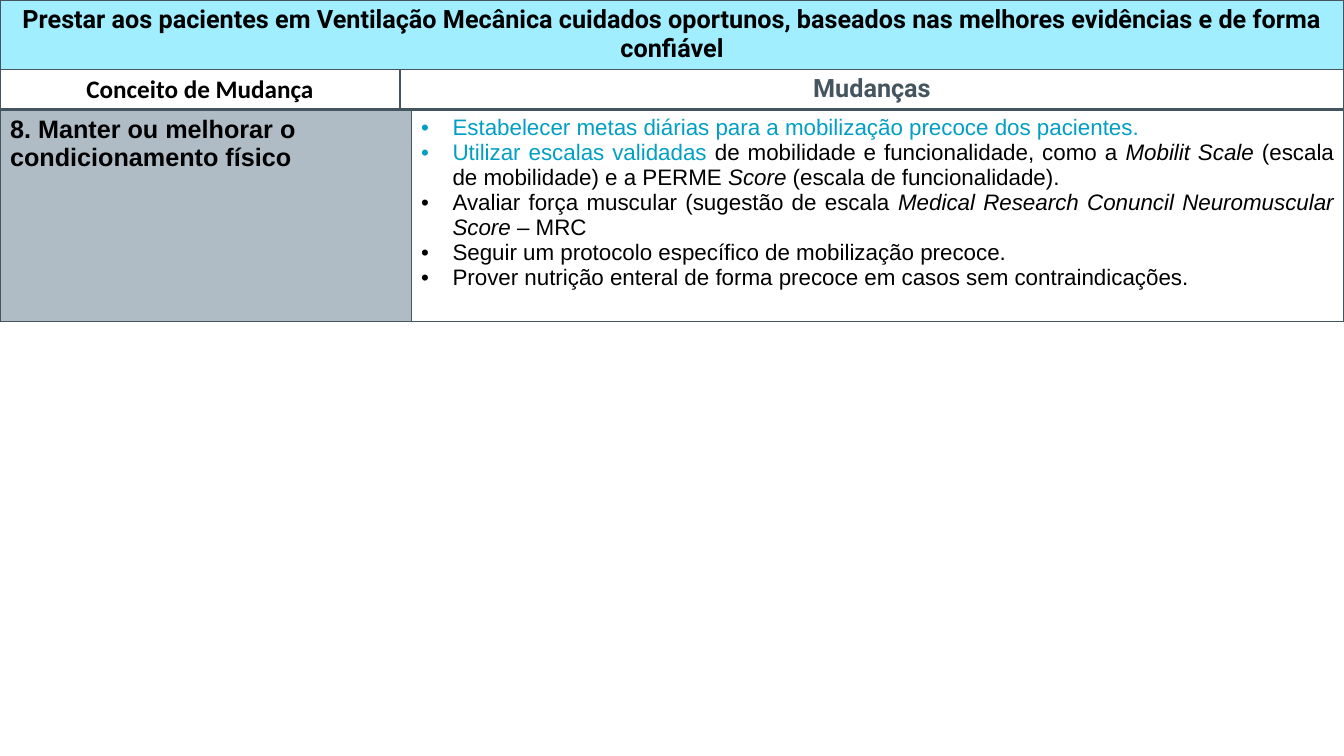
from lxml import etree
from pptx import Presentation
from pptx.dml.color import RGBColor
from pptx.enum.text import MSO_ANCHOR, PP_ALIGN
from pptx.oxml.ns import qn
from pptx.util import Cm, Pt

CENTER, LEFT, JUSTIFY = PP_ALIGN.CENTER, PP_ALIGN.LEFT, PP_ALIGN.JUSTIFY
MIDDLE = MSO_ANCHOR.MIDDLE
PAGE_WIDTH, PAGE_HEIGHT = 33.87, 19.05
SLATE, BLACK, BLUE, WHITE = "455560", "000000", "009FC3", "FFFFFF"
CYAN, GREY = "A0EEFF", "AFBCC5"

CHANGES = [
    (LEFT, [("Estabelecer metas diárias para a mobilização precoce dos pacientes.", BLUE, False)]),
    (JUSTIFY, [
        ("Utilizar escalas validadas ", BLUE, False),
        ("de mobilidade e funcionalidade, como a ", BLACK, False),
        ("Mobilit Scale ", BLACK, True),
        ("(escala de mobilidade) e a PERME ", BLACK, False),
        ("Score", BLACK, True),
        (" (escala de funcionalidade).", BLACK, False),
    ]),
    (JUSTIFY, [
        ("Avaliar força muscular (sugestão de escala ", BLACK, False),
        ("Medical Research Conuncil Neuromuscular Score ", BLACK, True),
        ("– MRC", BLACK, False),
    ]),
    (LEFT, [("Seguir um protocolo específico de mobilização precoce.", BLACK, False)]),
    (LEFT, [("Prover nutrição enteral de forma precoce em casos sem contraindicações.", BLACK, False)]),
]


def color(value):
    return RGBColor.from_string(value)


def add_border(cell):
    properties = cell._tc.get_or_add_tcPr()
    for side in ("a:lnL", "a:lnR", "a:lnT", "a:lnB"):
        line = etree.SubElement(properties, qn(side), w=str(Pt(1)))
        fill = etree.SubElement(line, qn("a:solidFill"))
        etree.SubElement(fill, qn("a:srgbClr"), val=SLATE)


def add_grid(page, top, widths, heights):
    frame = page.shapes.add_table(len(heights), len(widths), Cm(0), Cm(top),
                                  Cm(sum(widths)), Cm(sum(heights)))
    table = frame.table
    table.first_row = False
    table.horz_banding = False
    for column, width in zip(table.columns, widths):
        column.width = Cm(width)
    for row, height in zip(table.rows, heights):
        row.height = Cm(height)
    for cell in table.iter_cells():
        add_border(cell)
        cell.fill.background()
    return table


def fill_cell(cell, background):
    cell.fill.solid()
    cell.fill.fore_color.rgb = color(background)


def format_font(font, name, size, value, bold=False, italic=False):
    font.name = name
    font.size = Pt(size)
    font.color.rgb = color(value)
    font.bold = bold
    font.italic = italic


def write_heading(cell, text, name, value, background, align=CENTER):
    fill_cell(cell, background)
    cell.text_frame.text = text
    para = cell.text_frame.paragraphs[0]
    para.alignment = align
    format_font(para.runs[0].font, name, 18, value, bold=True)


def add_bullet(para):
    properties = para._p.get_or_add_pPr()
    properties.set("marL", str(Cm(0.79)))
    properties.set("indent", str(-Cm(0.79)))
    etree.SubElement(properties, qn("a:buFont"), typeface="Arial")
    etree.SubElement(properties, qn("a:buChar"), char="•")


def write_bullets(cell, items):
    frame = cell.text_frame
    for index, (align, spans) in enumerate(items):
        para = frame.add_paragraph() if index else frame.paragraphs[0]
        add_bullet(para)
        para.alignment = align
        for text, value, italic in spans:
            span = para.add_run()
            span.text = text
            format_font(span.font, "Arial", 16, value, italic=italic)


def add_header(page):
    table = add_grid(page, 0, (10.08, PAGE_WIDTH - 10.08), (1.74, 1.0))
    banner = table.cell(0, 0)
    banner.merge(table.cell(0, 1))
    write_heading(banner, "Prestar aos pacientes em Ventilação Mecânica cuidados oportunos, "
                  "baseados nas melhores evidências e de forma confiável", "Roboto", BLACK, CYAN)
    concept, changes = table.cell(1, 0), table.cell(1, 1)
    write_heading(concept, "Conceito de Mudança", "Calibri", BLACK, WHITE)
    write_heading(changes, "Mudanças", "Roboto", SLATE, WHITE)
    concept.vertical_anchor = changes.vertical_anchor = MIDDLE
    concept.margin_left = concept.margin_right = concept.margin_top = Cm(0.02)
    concept.margin_bottom = Cm(0)


def add_concept(page):
    table = add_grid(page, 2.79, (10.36, PAGE_WIDTH - 10.36), (5.31,))
    write_heading(table.cell(0, 0), "8. Manter ou melhorar o condicionamento físico",
                  "Arial", BLACK, GREY, LEFT)
    write_bullets(table.cell(0, 1), CHANGES)


def main():
    deck = Presentation()
    deck.slide_width, deck.slide_height = Cm(PAGE_WIDTH), Cm(PAGE_HEIGHT)
    page = deck.slides.add_slide(deck.slide_layouts[6])
    add_header(page)
    add_concept(page)
    deck.save("out.pptx")


if __name__ == "__main__":
    main()
